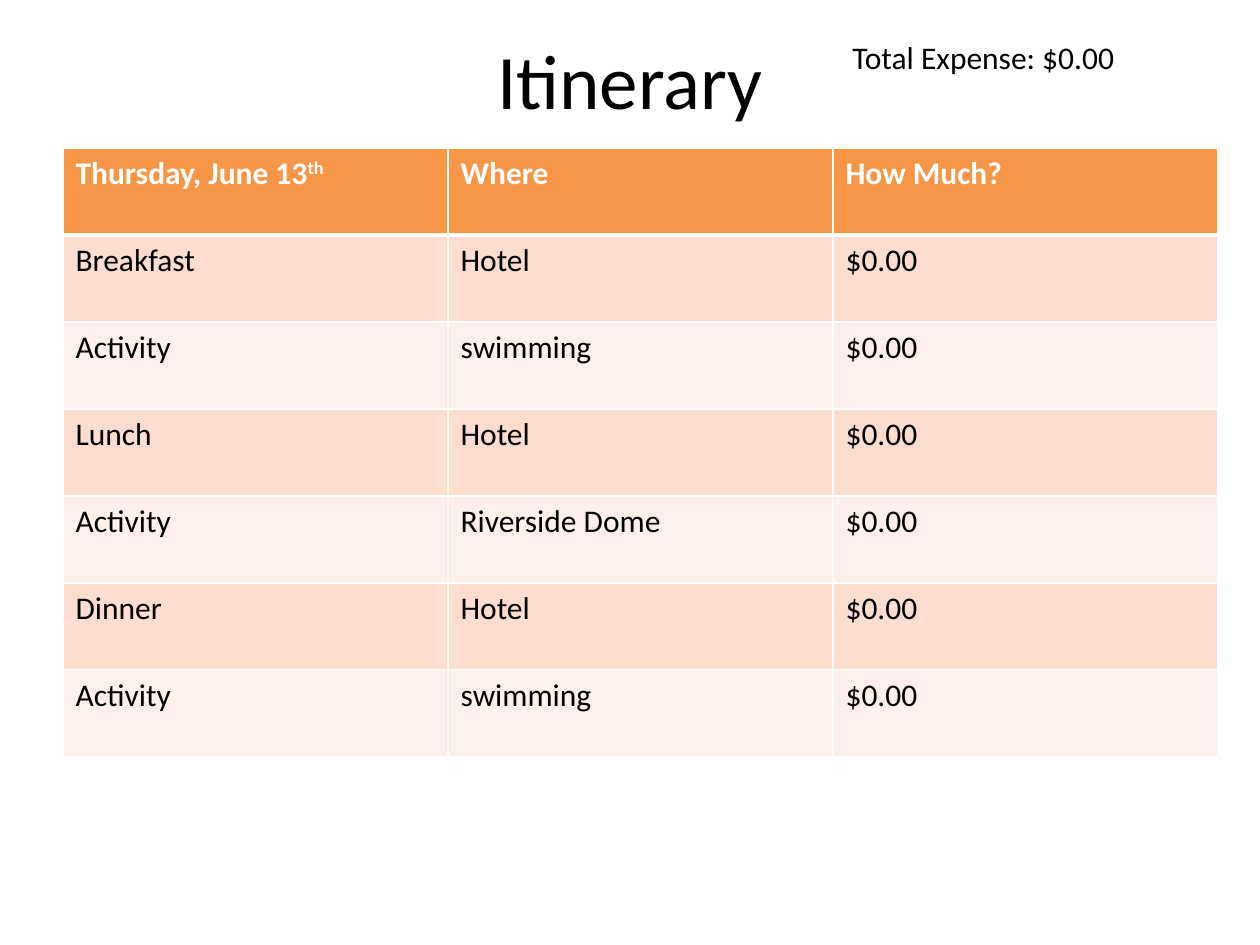
from dataclasses import dataclass

from lxml import etree
from pptx import Presentation
from pptx.dml.color import RGBColor
from pptx.enum.text import MSO_ANCHOR, PP_ALIGN
from pptx.oxml.ns import qn
from pptx.util import Pt

MIDDLE = MSO_ANCHOR.MIDDLE
CENTER = PP_ALIGN.CENTER
EMU_PER_PX = 914400 / 126
TITLE_ONLY = 5


@dataclass(frozen=True)
class Theme:
    font: str = "Calibri"
    ink: str = "000000"
    paper: str = "FFFFFF"
    header: str = "F79646"
    bands: tuple = ("FCDDCF", "FDEFE9")
    title_size: int = 44
    body_size: int = 18
    border: int = 1
    header_border: int = 3


@dataclass(frozen=True)
class Area:
    left: int
    top: int
    width: int
    height: int

    def emu(self) -> tuple:
        return tuple(map(px, (self.left, self.top, self.width, self.height)))


@dataclass(frozen=True)
class Entry:
    event: str
    where: str
    cost: str = "$0.00"


THEME = Theme()
TITLE_AREA = Area(63, 0, 1134, 158)
TOTAL_AREA = Area(840, 32, 388, 50)
TABLE_AREA = Area(63, 148, 1155, 609)
HEADINGS = ("Thursday, June 13", "Where", "How Much?")
ENTRIES = (
    Entry("Breakfast", "Hotel"),
    Entry("Activity", "swimming"),
    Entry("Lunch", "Hotel"),
    Entry("Activity", "Riverside Dome"),
    Entry("Dinner", "Hotel"),
    Entry("Activity", "swimming"),
)


def px(length: int) -> int:
    return round(length * EMU_PER_PX)


def add_span(para, text: str, size: int, color: str = THEME.ink, bold: bool = False):
    span = para.add_run()
    span.text = text
    span.font.name = THEME.font
    span.font.size = Pt(size)
    span.font.bold = bold
    span.font.color.rgb = RGBColor.from_string(color)
    return span


def add_border(cell, side: str, width: int) -> None:
    properties = cell._tc.get_or_add_tcPr()
    line = etree.SubElement(properties, qn(f"a:ln{side}"), w=str(Pt(width)))
    fill = etree.SubElement(line, qn("a:solidFill"))
    etree.SubElement(fill, qn("a:srgbClr"), val=THEME.paper)


def style_cell(cell, row: int) -> None:
    heavy_side = {0: "B", 1: "T"}.get(row)
    for side in "LRTB":
        add_border(cell, side, THEME.header_border if side == heavy_side else THEME.border)
    color = THEME.bands[(row - 1) % 2] if row else THEME.header
    cell.fill.solid()
    cell.fill.fore_color.rgb = RGBColor.from_string(color)


def add_title(page) -> None:
    title = page.shapes.title
    title.left, title.top, title.width, title.height = TITLE_AREA.emu()
    title.text_frame.vertical_anchor = MIDDLE
    para = title.text_frame.paragraphs[0]
    para.alignment = CENTER
    add_span(para, "Itinerary", THEME.title_size)


def add_total(page) -> None:
    box = page.shapes.add_textbox(*TOTAL_AREA.emu())
    box.text_frame.word_wrap = True
    add_span(box.text_frame.paragraphs[0], "Total Expense: $0.00", THEME.body_size)


def add_itinerary(page) -> None:
    rows = [HEADINGS] + [(entry.event, entry.where, entry.cost) for entry in ENTRIES]
    table = page.shapes.add_table(len(rows), len(HEADINGS), *TABLE_AREA.emu()).table
    for column in table.columns:
        column.width = px(TABLE_AREA.width // len(HEADINGS))
    for row, texts in enumerate(rows):
        table.rows[row].height = px(TABLE_AREA.height // len(rows))
        color = THEME.ink if row else THEME.paper
        for column, text in enumerate(texts):
            cell = table.cell(row, column)
            style_cell(cell, row)
            add_span(cell.text_frame.paragraphs[0], text, THEME.body_size, color, row == 0)
    date = table.cell(0, 0).text_frame.paragraphs[0]
    ordinal = add_span(date, "th", THEME.body_size, THEME.paper, True)
    ordinal._r.get_or_add_rPr().set("baseline", "30000")


def main() -> None:
    deck = Presentation()
    deck.slide_width, deck.slide_height = px(1260), px(945)
    page = deck.slides.add_slide(deck.slide_layouts[TITLE_ONLY])
    add_title(page)
    add_total(page)
    add_itinerary(page)
    deck.save("out.pptx")


if __name__ == "__main__":
    main()
